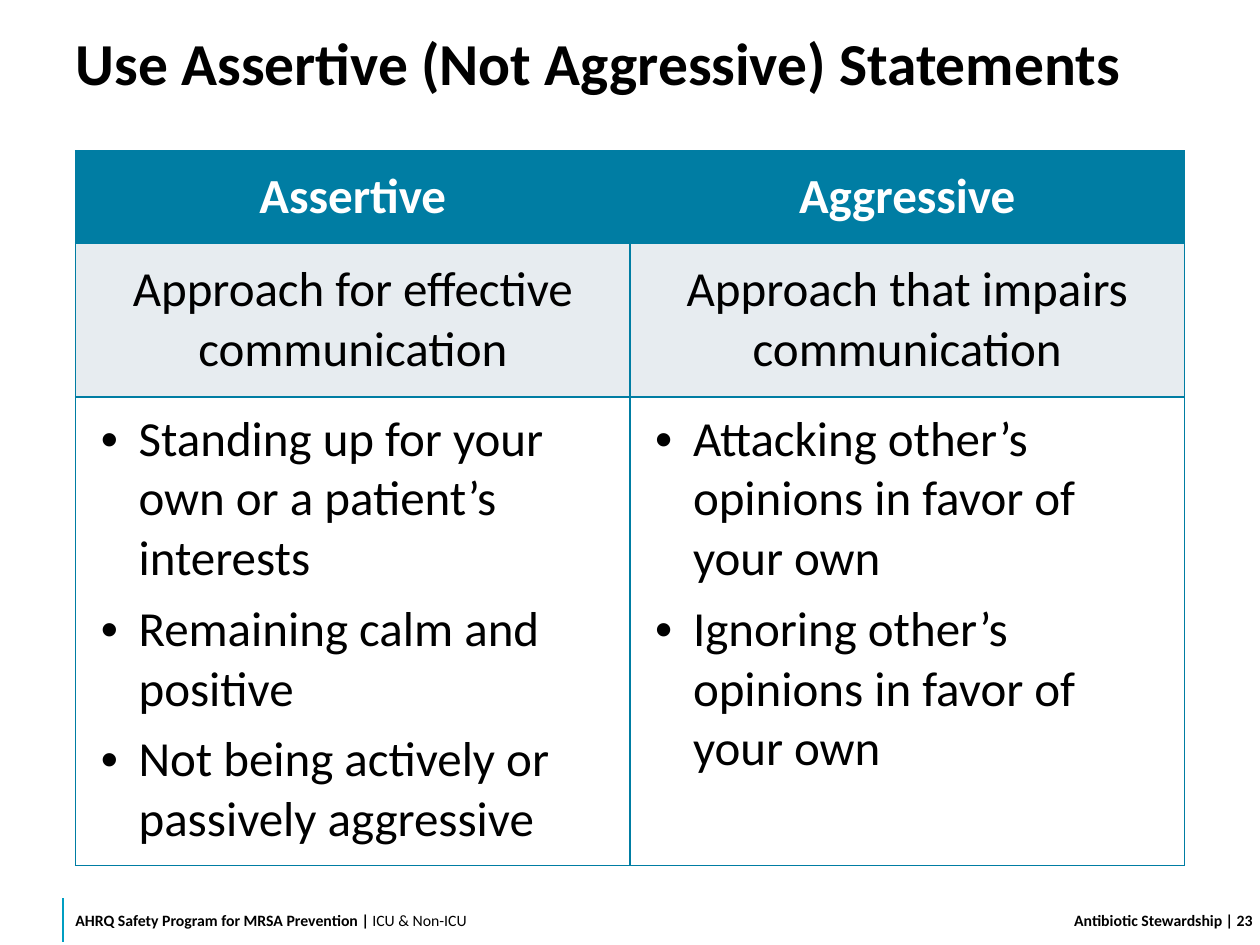
"""Build the slide that compares assertive and aggressive statements."""
from lxml import etree
from pptx import Presentation
from pptx import util as u
from pptx.dml.color import RGBColor
from pptx.enum import shapes, text
from pptx.oxml import ns

BLACK = RGBColor(0x00, 0x00, 0x00)
WHITE = RGBColor(0xFF, 0xFF, 0xFF)
TEAL = RGBColor(0x00, 0x7D, 0xA3)
CYAN = RGBColor(0x00, 0x9E, 0xC2)
PALE = RGBColor(0xE7, 0xEC, 0xF0)
CENTER, RIGHT = text.PP_ALIGN.CENTER, text.PP_ALIGN.RIGHT
MIDDLE, TOP = text.MSO_ANCHOR.MIDDLE, text.MSO_ANCHOR.TOP

TITLE = "Use Assertive (Not Aggressive) Statements"
COMPARISON = [
    (["Assertive"], ["Aggressive"]),
    (["Approach for effective communication"], ["Approach that impairs communication"]),
    (
        ["Standing up for your own or a patient’s interests",
         "Remaining calm and positive",
         "Not being actively or passively aggressive"],
        ["Attacking other’s opinions in favor of your own",
         "Ignoring other’s opinions in favor of your own"],
    ),
]
ROW_STYLES = [
    dict(height=0.73, fill=TEAL, anchor=MIDDLE,
         font=dict(color=WHITE, bold=True, align=CENTER)),
    dict(height=1.22, fill=PALE, anchor=MIDDLE, font=dict(align=CENTER)),
    dict(height=3.72, fill=WHITE, anchor=TOP, font=dict(bullet=True, before=6)),
]
FOOTERS = [
    dict(left=0.5, width=4.1, insets=(0.1, 0, 0.1, 0), align=None,
         runs=[("AHRQ Safety Program for MRSA Prevention | ", True), ("ICU & Non-ICU", False)]),
    dict(left=7.1, width=2.6, insets=(0.1, 0.05, 0, 0.05), align=RIGHT,
         runs=[("Antibiotic Stewardship", True)]),
    dict(left=9.7, width=0.3, insets=(0, 0.05, 0, 0.05), align=None,
         runs=[(" | 23", True)]),
]
WIDTH, HEIGHT = 10, 7.5
MARGIN = WIDTH * 0.06
TABLE_TOP = HEIGHT * 0.16
FOOTER_TOP, FOOTER_HEIGHT = 7.1, 0.4


def write(frame, paragraphs, size=28, color=BLACK, bold=False, align=None,
          bullet=False, before=0, spacing=None):
    """Write paragraphs, each a string or a list of (string, bold) runs."""
    for index, content in enumerate(paragraphs):
        paragraph = frame.add_paragraph() if index else frame.paragraphs[0]
        if bullet:
            properties = paragraph._p.get_or_add_pPr()
            properties.set("marL", str(u.Inches(0.3)))
            properties.set("indent", str(u.Inches(-0.3)))
            etree.SubElement(properties, ns.qn("a:buFont"), typeface="Arial")
            etree.SubElement(properties, ns.qn("a:buChar"), char="•")
        paragraph.alignment = align
        if index:
            paragraph.space_before = u.Pt(before)
        if spacing:
            paragraph.line_spacing = spacing
        for words, weight in [(content, bold)] if isinstance(content, str) else content:
            run = paragraph.add_run()
            run.text = words
            run.font.name, run.font.size, run.font.bold = "Calibri", u.Pt(size), weight
            run.font.color.rgb = color


def inset(holder, insets):
    """Set left, top, right and bottom margins in inches."""
    for side, value in zip(("left", "top", "right", "bottom"), insets):
        setattr(holder, f"margin_{side}", u.Inches(value))


def add_borders(cell, color, points):
    """Draw all four borders of a cell."""
    properties = cell._tc.get_or_add_tcPr()
    for side in "LRTB":
        border = etree.SubElement(properties, ns.qn(f"a:ln{side}"), w=str(u.Pt(points)))
        fill = etree.SubElement(border, ns.qn("a:solidFill"))
        etree.SubElement(fill, ns.qn("a:srgbClr"), val=str(color))


def add_title(slide):
    """Place and format the slide title."""
    title = slide.shapes.title
    title.left, title.top = u.Inches(0.5), 0
    title.width, title.height = u.Inches(WIDTH - 1), u.Inches(1)
    frame = title.text_frame
    frame.word_wrap, frame.vertical_anchor = True, MIDDLE
    frame.auto_size = text.MSO_AUTO_SIZE.NONE
    inset(frame, (0.1, 0.1, 0.1, 0.05))
    write(frame, [TITLE], size=34, bold=True, align=text.PP_ALIGN.LEFT, spacing=0.9)


def add_comparison(slide):
    """Add the two-column comparison table."""
    heights = [style["height"] for style in ROW_STYLES]
    table = slide.shapes.add_table(
        len(COMPARISON), len(COMPARISON[0]), u.Inches(MARGIN), u.Inches(TABLE_TOP),
        u.Inches(WIDTH - 2 * MARGIN), u.Inches(sum(heights))).table
    table.first_row = table.horz_banding = False
    for row, contents, style in zip(table.rows, COMPARISON, ROW_STYLES):
        row.height = u.Inches(style["height"])
        for cell, paragraphs in zip(row.cells, contents):
            inset(cell, (0.2, 0.1, 0.2, 0.1))
            cell.vertical_anchor = style["anchor"]
            add_borders(cell, TEAL, 1)
            cell.fill.solid()
            cell.fill.fore_color.rgb = style["fill"]
            write(cell.text_frame, paragraphs, **style["font"])


def add_footer(slide):
    """Add the footer texts and the accent rule."""
    for footer in FOOTERS:
        frame = slide.shapes.add_textbox(
            u.Inches(footer["left"]), u.Inches(FOOTER_TOP),
            u.Inches(footer["width"]), u.Inches(FOOTER_HEIGHT)).text_frame
        frame.word_wrap, frame.vertical_anchor = True, MIDDLE
        inset(frame, footer["insets"])
        write(frame, [footer["runs"]], size=9, align=footer["align"])
    accent = slide.shapes.add_connector(
        shapes.MSO_CONNECTOR.STRAIGHT, u.Inches(0.5), u.Inches(7.13),
        u.Inches(0.5), u.Inches(7.48))
    accent.line.color.rgb, accent.line.width = CYAN, u.Pt(1)
    etree.SubElement(accent._element.spPr, ns.qn("a:effectLst"))


def main():
    """Assemble and save the slide."""
    deck = Presentation()
    deck.slide_width, deck.slide_height = u.Inches(WIDTH), u.Inches(HEIGHT)
    slide = deck.slides.add_slide(deck.slide_layouts[5])
    add_title(slide)
    add_comparison(slide)
    add_footer(slide)
    deck.save("out.pptx")


if __name__ == "__main__":
    main()
